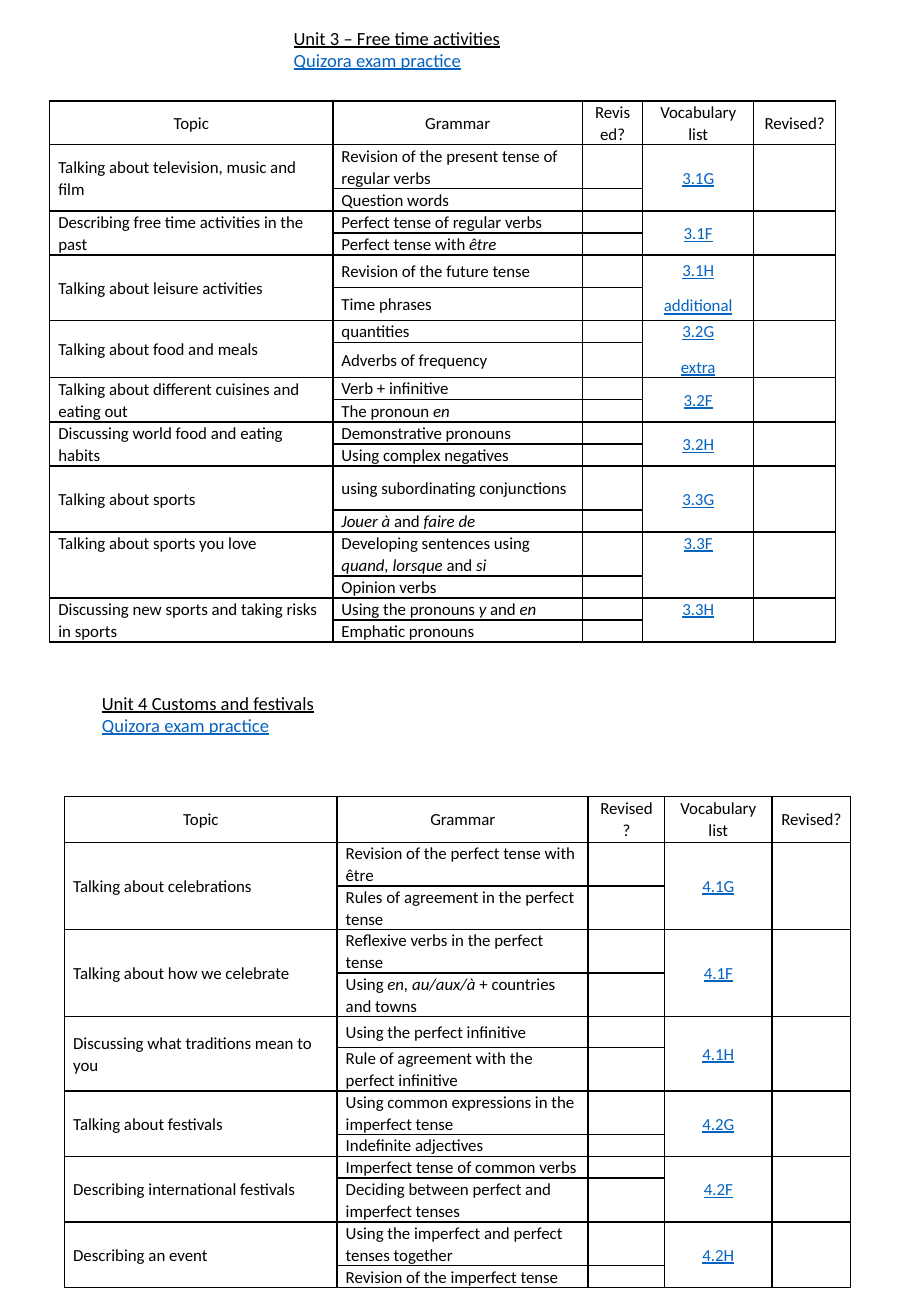
from lxml import etree
from pptx import Presentation
from pptx.dml.color import RGBColor
from pptx.enum.text import MSO_ANCHOR, MSO_AUTO_SIZE, PP_ALIGN
from pptx.oxml.ns import qn
from pptx.util import Cm, Pt

CENTER, LEFT = PP_ALIGN.CENTER, PP_ALIGN.LEFT
MIDDLE, TOP = MSO_ANCHOR.MIDDLE, MSO_ANCHOR.TOP
FIT_SHAPE = MSO_AUTO_SIZE.SHAPE_TO_FIT_TEXT
BLACK, LINK_BLUE = "000000", "0563C1"

HEADINGS = ["Topic", "Grammar", "Revised?", "Vocabulary list", "Revised?"]
FREE_TIME = [
    ("Talking about television, music and film",
     "Revision of the present tense of regular verbs", "Question words", ["3.1G"]),
    ("Describing free time activities in the past",
     "Perfect tense of regular verbs", "Perfect tense with *être*", ["3.1F"]),
    ("Talking about leisure activities",
     "Revision of the future tense", "Time phrases", ["3.1H", "additional"]),
    ("Talking about food and meals",
     "quantities", "Adverbs of frequency", ["3.2G", "extra"]),
    ("Talking about different cuisines and eating out",
     "Verb + infinitive", "The pronoun *en*", ["3.2F"]),
    ("Discussing world food and eating habits",
     "Demonstrative pronouns", "Using complex negatives", ["3.2H"]),
    ("Talking about sports",
     "using subordinating conjunctions", "*Jouer à* and *faire de*", ["3.3G"]),
    ("Talking about sports you love",
     "Developing sentences using *quand, lorsque* and *si*", "Opinion verbs", ["3.3F"]),
    ("Discussing new sports and taking risks in sports",
     "Using the pronouns *y* and *en*", "Emphatic pronouns", ["3.3H"]),
]
CUSTOMS = [
    ("Talking about celebrations",
     "Revision of the perfect tense with être",
     "Rules of agreement in the perfect tense", ["4.1G"]),
    ("Talking about how we celebrate",
     "Reflexive verbs in the perfect tense",
     "Using *en, au/aux/à* + countries and towns", ["4.1F"]),
    ("Discussing what traditions mean to you",
     "Using the perfect infinitive",
     "Rule of agreement with the perfect infinitive", ["4.1H"]),
    ("Talking about festivals",
     "Using common expressions in the imperfect tense",
     "Indefinite adjectives", ["4.2G"]),
    ("Describing international festivals",
     "Imperfect tense of common verbs",
     "Deciding between perfect and imperfect tenses", ["4.2F"]),
    ("Describing an event",
     "Using the imperfect and perfect tenses together",
     "Revision of the imperfect tense", ["4.2H"]),
]


def color(value):
    return RGBColor.from_string(value)


def apply(target, values):
    for name, value in values.items():
        setattr(target, name, value)


class RevisionPage:
    font = "Calibri"
    cell_format = {"margin_left": Cm(0.18), "margin_right": Cm(0.18),
                   "margin_top": 0, "margin_bottom": 0}
    para_format = {"line_spacing": 1.07, "space_after": Pt(8)}

    def __init__(self, page):
        self.page = page

    def add_text(self, para, text, size, ink=BLACK, underline=False):
        for index, part in enumerate(text.split("*")):
            if part:
                span = para.add_run()
                span.text = part
                apply(span.font, {"name": self.font, "size": Pt(size),
                                  "italic": index % 2 == 1, "underline": underline})
                span.font.color.rgb = color(ink)

    def title(self, left, top, width, heading):
        box = self.page.shapes.add_textbox(Cm(left), Cm(top), Cm(width), Cm(1.19))
        frame = box.text_frame
        apply(frame, {"word_wrap": True, "vertical_anchor": MIDDLE, "auto_size": FIT_SHAPE})
        self.add_text(frame.paragraphs[0], heading, 11, underline=True)
        self.add_text(frame.add_paragraph(), "Quizora exam practice", 11, LINK_BLUE, True)

    def border(self, cell):
        properties = cell._tc.get_or_add_tcPr()
        for side in ("a:lnL", "a:lnR", "a:lnT", "a:lnB"):
            line = etree.SubElement(properties, qn(side), w=str(Pt(1)))
            fill = etree.SubElement(line, qn("a:solidFill"))
            etree.SubElement(fill, qn("a:srgbClr"), val=BLACK)

    def style_cell(self, cell):
        self.border(cell)
        cell.fill.background()
        apply(cell, self.cell_format)
        para = cell.text_frame.paragraphs[0]
        etree.SubElement(para._p, qn("a:endParaRPr"), sz="1000")

    def fill_cell(self, cell, lines, align=LEFT, anchor=MIDDLE, ink=BLACK):
        cell.vertical_anchor = anchor
        frame = cell.text_frame
        for index, text in enumerate(lines):
            para = frame.add_paragraph() if index else frame.paragraphs[0]
            apply(para, {**self.para_format, "alignment": align})
            self.add_text(para, text, 10, ink, ink == LINK_BLUE)

    def table(self, left, top, widths, heights, topics, first_top_row):
        frame = self.page.shapes.add_table(len(heights), len(widths), Cm(left), Cm(top),
                                           Cm(sum(widths)), Cm(sum(heights)))
        grid = frame.table
        apply(grid, {"first_row": False, "horz_banding": False})
        for column, width in zip(grid.columns, widths):
            column.width = Cm(width)
        for row, height in zip(grid.rows, heights):
            row.height = Cm(height)
        for row in range(1, len(heights), 2):
            for column in (0, 3, 4):
                grid.cell(row, column).merge(grid.cell(row + 1, column))
        for cell in grid.iter_cells():
            self.style_cell(cell)
        for column, heading in enumerate(HEADINGS):
            self.fill_cell(grid.cell(0, column), [heading], CENTER)
        for index, (topic, first, second, vocabulary) in enumerate(topics):
            row = 1 + 2 * index
            anchor = TOP if row >= first_top_row else MIDDLE
            next_anchor = TOP if row + 1 >= first_top_row else MIDDLE
            self.fill_cell(grid.cell(row, 0), [topic], anchor=anchor)
            self.fill_cell(grid.cell(row, 1), [first], anchor=anchor)
            self.fill_cell(grid.cell(row + 1, 1), [second], anchor=next_anchor)
            self.fill_cell(grid.cell(row, 3), vocabulary, CENTER, anchor, LINK_BLUE)


def main():
    deck = Presentation()
    apply(deck, {"slide_width": Cm(19.05), "slide_height": Cm(27.51)})
    revision = RevisionPage(deck.slides.add_slide(deck.slide_layouts[6]))
    revision.table(1.04, 2.11, [5.92, 5.22, 1.26, 2.32, 1.71],
                   [0.91, 0.92, 0.47, 0.46, 0.46, 0.68, 0.68, 0.46, 0.73, 0.46,
                    0.47, 0.46, 0.46, 0.92, 0.46, 0.92, 0.46, 0.46, 0.46],
                   FREE_TIME, 14)
    revision.title(5.89, 0.43, 7.09, "Unit 3 – Free time activities")
    revision.table(1.35, 16.65, [5.7, 5.25, 1.6, 2.24, 1.65],
                   [0.96, 0.9, 0.91, 0.91, 0.91, 0.65, 0.91, 0.9, 0.46, 0.44,
                    0.92, 0.91, 0.45],
                   CUSTOMS, 12)
    revision.title(1.88, 14.33, 9.4, "Unit 4 Customs and festivals")
    deck.save("out.pptx")


if __name__ == "__main__":
    main()
